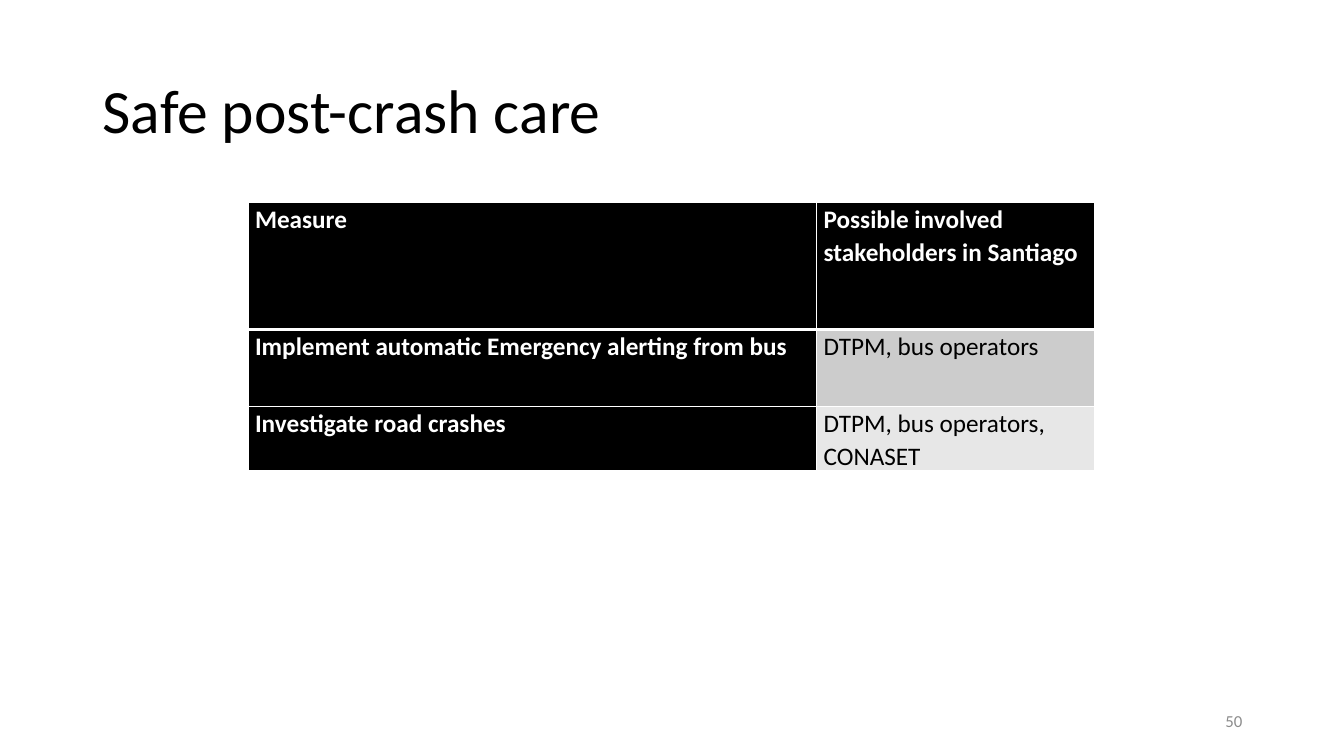
import pptx
import pptx.dml.color
import pptx.enum.text
import pptx.oxml
import pptx.oxml.ns
import pptx.util
from dataclasses import dataclass

PX = 9144  # EMU per px, 100 px to the inch


@dataclass(frozen=True)
class Theme:
    font: str = "Calibri"
    black: str = "000000"
    white: str = "FFFFFF"
    page_grey: str = "8C8C8C"
    bands: tuple = ("CCCCCC", "E7E7E7")
    title_size: int = 44
    table_size: int = 18
    page_size: int = 12
    rule: int = 1
    header_rule: int = 3


THEME = Theme()
MEASURES = [
    ("Measure", "Possible involved stakeholders in Santiago"),
    ("Implement automatic Emergency alerting from bus", "DTPM, bus operators"),
    ("Investigate road crashes", "DTPM, bus operators, CONASET"),
]
COLUMN_WIDTHS = (564, 276)
ROW_HEIGHTS = (126, 76, 48)


def px(length):
    return pptx.util.Emu(length * PX)


def rgb(colour):
    return pptx.dml.color.RGBColor.from_string(colour)


def write(paragraph, words, size, colour, bold=False):
    run = paragraph.add_run()
    run.text = words
    run.font.name = THEME.font
    run.font.size = pptx.util.Pt(size)
    run.font.bold = bold
    run.font.color.rgb = rgb(colour)


def add_label(slide, box, words, size, colour, align, line_spacing=1.0):
    frame = slide.shapes.add_textbox(*map(px, box)).text_frame
    frame.word_wrap = True
    frame.vertical_anchor = pptx.enum.text.MSO_ANCHOR.MIDDLE
    paragraph = frame.paragraphs[0]
    paragraph.alignment = align
    paragraph.line_spacing = line_spacing
    write(paragraph, words, size, colour)


def rule_cell(cell, widths):
    """Draw the white rules: left, right, top, bottom, in points."""
    properties = cell._tc.get_or_add_tcPr()
    for place, (side, width) in enumerate(zip("LRTB", widths)):
        line = pptx.oxml.parse_xml(
            f'<a:ln{side} {pptx.oxml.ns.nsdecls("a")} w="{pptx.util.Pt(width)}">'
            f'<a:solidFill><a:srgbClr val="{THEME.white}"/></a:solidFill></a:ln{side}>'
        )
        properties.insert(place, line)


def add_measures_table(slide, box):
    table = slide.shapes.add_table(
        len(MEASURES), len(COLUMN_WIDTHS), *map(px, box)
    ).table
    table.horz_banding = False
    for column, width in zip(table.columns, COLUMN_WIDTHS):
        column.width = px(width)
    for row, height in zip(table.rows, ROW_HEIGHTS):
        row.height = px(height)

    for r, measure in enumerate(MEASURES):
        for c, words in enumerate(measure):
            cell = table.cell(r, c)
            heading = r == 0 or c == 0
            cell.margin_left = cell.margin_right = px(7)
            cell.margin_top = cell.margin_bottom = 0
            cell.fill.solid()
            cell.fill.fore_color.rgb = rgb(THEME.black if heading else THEME.bands[r - 1])
            top = THEME.header_rule if r == 1 else THEME.rule
            bottom = THEME.header_rule if r == 0 else THEME.rule
            rule_cell(cell, (THEME.rule, THEME.rule, top, bottom))
            paragraph = cell.text_frame.paragraphs[0]
            paragraph.line_spacing = 1.07
            paragraph.space_after = pptx.util.Pt(8)
            write(paragraph, words, THEME.table_size,
                  THEME.white if heading else THEME.black, heading)


def build_measures_slide(deck):
    slide = deck.slides.add_slide(deck.slide_layouts[6])
    align = pptx.enum.text.PP_ALIGN
    # Title
    add_label(slide, (92, 40, 1150, 145), "Safe post-crash care",
              THEME.title_size, THEME.black, align.LEFT, 0.9)
    # Measures and stakeholders
    add_measures_table(slide, (246, 201, sum(COLUMN_WIDTHS), sum(ROW_HEIGHTS)))
    # Page number
    add_label(slide, (942, 695, 300, 40), "50",
              THEME.page_size, THEME.page_grey, align.RIGHT)


def main():
    deck = pptx.Presentation()
    deck.slide_width, deck.slide_height = px(1333), px(750)
    build_measures_slide(deck)
    deck.save("out.pptx")


if __name__ == "__main__":
    main()
